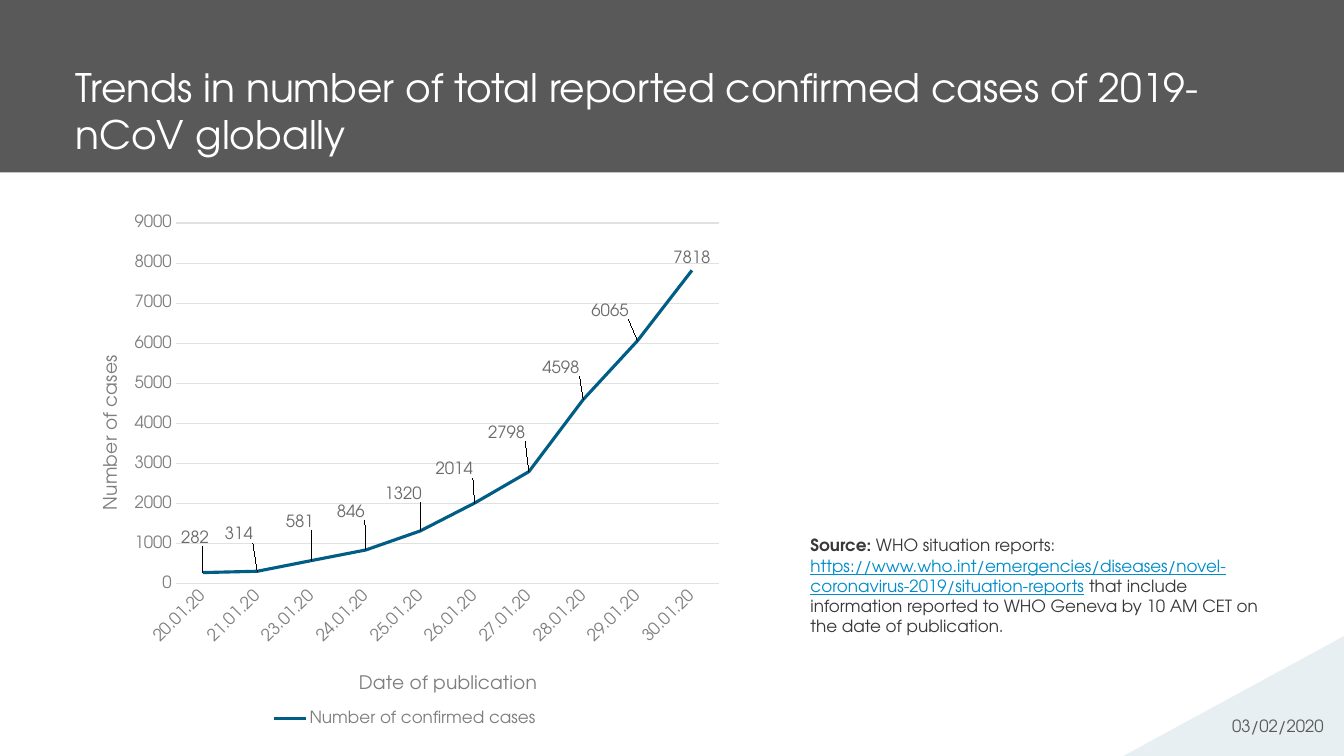
import pptx
import pptx.util
import pptx.chart.data
import pptx.dml.color
import pptx.enum.chart
import pptx.enum.shapes
import pptx.enum.text
import pptx.oxml
import pptx.oxml.ns

# Content
W, H = 13.33, 7.5
FONT = "TeX Gyre Adventor"
DARK, GREY, BLUE, LINE = "383838", "7E7E7E", "005D85", "E1E1E1"
TITLE = "Trends in number of total reported confirmed cases of 2019-nCoV globally"
DATE = "03/02/2020"
SERIES = "Number of confirmed cases"
# date, cases, label shift in percent of the chart's width and height
CASES = [
    ("20.01.20", 282, (-1.2, -4.2)),
    ("21.01.20", 314, (-2.8, -4.6)),
    ("23.01.20", 581, (-1.8, -4.9)),
    ("24.01.20", 846, (-2.3, -4.8)),
    ("25.01.20", 1320, (-2.6, -4.6)),
    ("26.01.20", 2014, (-3.1, -4)),
    ("27.01.20", 2798, (-3.4, -4.9)),
    ("28.01.20", 4598, (-3.4, -3.6)),
    ("29.01.20", 6065, (-4.2, -3.2)),
    ("30.01.20", 7818, None),
]
SOURCE = [
    ("Source: ", dict(bold=True)),
    ("WHO situation reports: ", {}),
    ("https://www.who.int/emergencies/diseases/novel-coronavirus-2019/situation-reports",
     dict(color="008DC9", underline=True)),
    (" that include information reported to WHO Geneva by 10 AM CET on the date of publication.", {}),
]
# Places of the chart's parts, in percent of the chart
PLOT = dict(x=15.1, y=3.5, w=82.8, h=68.6)
CAT_TITLE = dict(x=42.5, y=88.4)
VAL_TITLE = dict(x=3.2, y=28)

inch = pptx.util.Inches


def rgb(value):
    return pptx.dml.color.RGBColor.from_string(value)


def style(font, color=DARK, **values):
    for name, value in {"name": FONT, "size": pptx.util.Pt(12), "bold": False, **values}.items():
        setattr(font, name, value)
    font.color.rgb = rgb(color)


def write(tf, runs, insets, align="LEFT", anchor="TOP"):
    tf.word_wrap = True
    tf.vertical_anchor = getattr(pptx.enum.text.MSO_ANCHOR, anchor)
    for side, size in zip(("left", "top", "right", "bottom"), insets):
        setattr(tf, "margin_" + side, inch(size))
    p = tf.paragraphs[0]
    p.alignment = getattr(pptx.enum.text.PP_ALIGN, align)
    for text, values in runs:
        r = p.add_run()
        r.text = text
        style(r.font, **values)


def paint(sp, color):
    sp.shadow.inherit = False
    sp.fill.solid()
    sp.fill.fore_color.rgb = rgb(color)
    sp.line.fill.background()


def manual_layout(before, target="", edge=True, **places):
    """Put a manual layout right after the given chart element."""
    for old in before.getparent().findall(pptx.oxml.ns.qn("c:layout")):
        old.getparent().remove(old)
    parts = f'<c:layoutTarget val="{target}"/>' if target else ""
    if edge:
        parts += '<c:xMode val="edge"/><c:yMode val="edge"/>'
    parts += "".join(f'<c:{k} val="{v / 100:.3f}"/>' for k, v in places.items())
    before.addnext(pptx.oxml.parse_xml(
        f'<c:layout {pptx.oxml.ns.nsdecls("c")}><c:manualLayout>{parts}</c:manualLayout></c:layout>'))


prs = pptx.Presentation()
prs.slide_width, prs.slide_height = inch(W), inch(H)
slide = prs.slides.add_slide(prs.slide_layouts[6])

# Title band
sp = slide.shapes.add_shape(pptx.enum.shapes.MSO_SHAPE.RECTANGLE, 0, 0, inch(W), inch(1.71))
paint(sp, "595959")
write(sp.text_frame, [(TITLE, dict(color="FFFFFF", size=pptx.util.Pt(28)))], (0.75, 0.63, 0.75, 0.2))

# Line chart
data = pptx.chart.data.CategoryChartData()
data.categories = [day for day, _, _ in CASES]
data.add_series(SERIES, [count for _, count, _ in CASES])
chart = slide.shapes.add_chart(pptx.enum.chart.XL_CHART_TYPE.LINE, inch(0.76), inch(2.03),
                               inch(6.51), inch(5.22), data).chart
style(chart.font, size=pptx.util.Pt(10))
chart.has_title = False
chart.has_legend = True
chart.legend.position = pptx.enum.chart.XL_LEGEND_POSITION.BOTTOM
chart.legend.include_in_layout = False
style(chart.legend.font, GREY)
plot = chart.plots[0]
plot.vary_by_categories = False

# Axes
cat, val = chart.category_axis, chart.value_axis
for axis, title, place in ((cat, "Date of publication", CAT_TITLE),
                           (val, "Number of cases", VAL_TITLE)):
    axis.major_tick_mark = axis.minor_tick_mark = pptx.enum.chart.XL_TICK_MARK.NONE
    style(axis.tick_labels.font, GREY)
    tf = axis.axis_title.text_frame
    tf.text = title
    style(tf.paragraphs[0].runs[0].font, GREY, size=pptx.util.Pt(13.3))
    manual_layout(tf._txBody.getparent(), **place)
cat.tick_labels.font._element.getparent().getparent().getparent().bodyPr.set("rot", "-2700000")
val.minimum_scale, val.maximum_scale, val.major_unit = 0, 9000, 1000
val.has_major_gridlines = True
val.format.line.fill.background()
for line in (cat.format.line, val.major_gridlines.format.line):
    line.color.rgb = rgb(LINE)
    line.width = pptx.util.Pt(0.75)
plot_area = chart._chartSpace.chart.plotArea
for old in plot_area.findall(pptx.oxml.ns.qn("c:layout")):
    plot_area.remove(old)
manual_layout(plot_area[0], target="inner", **PLOT)
plot_area.insert(0, plot_area[1])

# Series and its value labels
series = plot.series[0]
series.smooth = False
series.marker.style = pptx.enum.chart.XL_MARKER_STYLE.NONE
series.format.line.color.rgb = rgb(BLUE)
series.format.line.width = pptx.util.Pt(2.25)
above = pptx.enum.chart.XL_LABEL_POSITION.ABOVE
labels = series.data_labels
labels.show_value = True
labels.position = above
style(labels.font, "6A6A6A")
for i, (_, _, shift) in enumerate(CASES):
    if shift:
        label = series.points[i].data_label
        style(label.font, "6A6A6A")
        label.position = above
        dLbl = labels._element.findall(pptx.oxml.ns.qn("c:dLbl"))[i]
        manual_layout(dLbl[0], edge=False, x=shift[0], y=shift[1])

# Corner with the date
left, top = 11.14, 6.31
builder = slide.shapes.build_freeform(inch(left), inch(H), scale=1.0)
builder.add_line_segments([(inch(W), inch(top)), (inch(W), inch(H))], close=True)
sp = builder.convert_to_shape()
paint(sp, "E8EFF2")
write(sp.text_frame, [(DATE, dict(color="595959"))], (0, 0, 0.2, 0.2), "RIGHT", "BOTTOM")

# Source note
sp = slide.shapes.add_textbox(inch(7.94), inch(5.26), inch(4.8), inch(1.11))
write(sp.text_frame, SOURCE, (0.1, 0.05, 0.1, 0.05))

prs.save("out.pptx")
